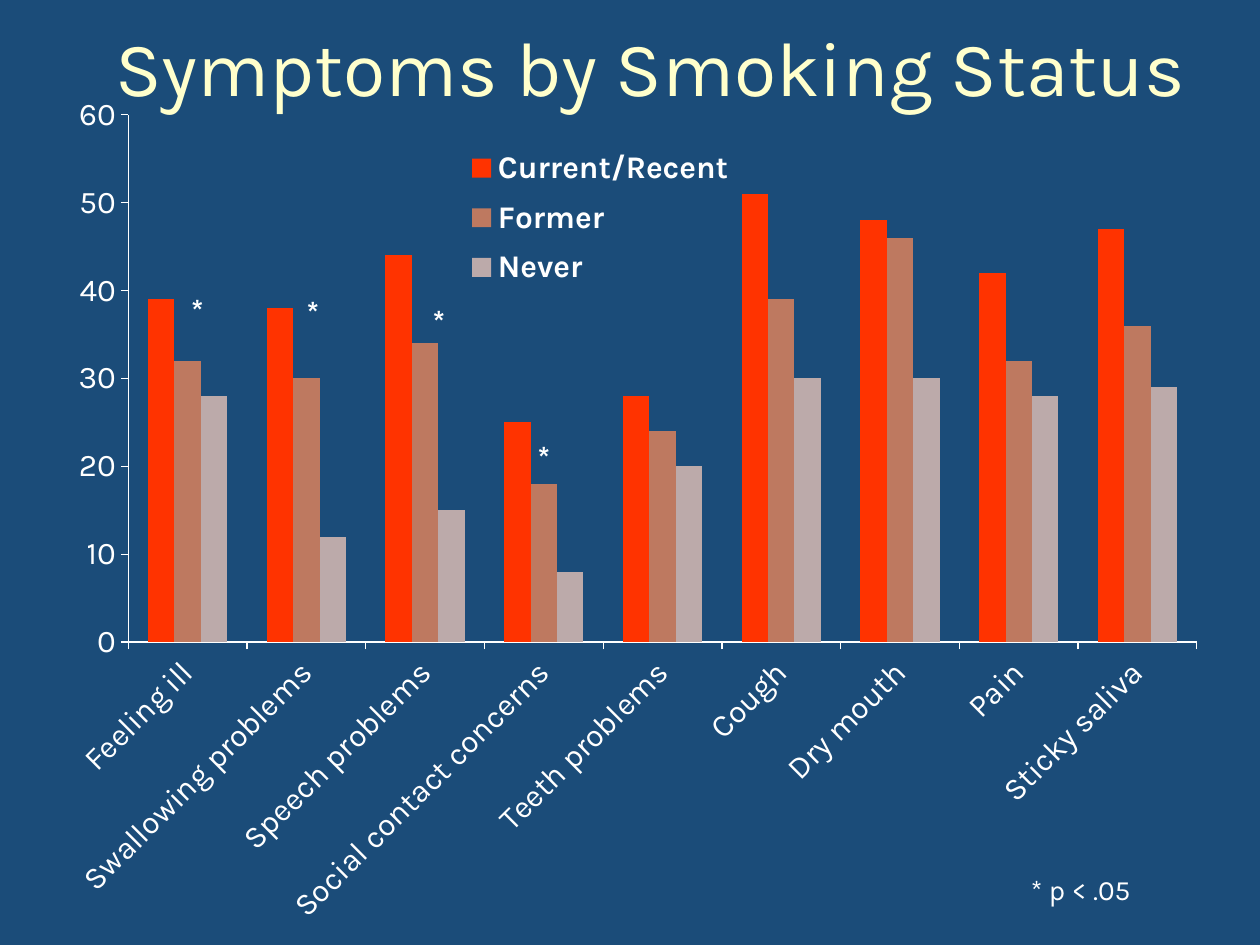
"""Build a slide charting symptoms by smoking status."""
from typing import NamedTuple

from pptx import Presentation
from pptx import util as u
from pptx.chart import data as chart_data
from pptx.dml.color import RGBColor
from pptx.enum import chart as chart_enum, text
from pptx.oxml import parse_xml
from pptx.oxml.ns import nsdecls, qn

NAVY = RGBColor(0x1B, 0x4C, 0x79)
CREAM = RGBColor(0xFF, 0xFF, 0xCC)
WHITE = RGBColor(0xFF, 0xFF, 0xFF)
RED = RGBColor(0xFF, 0x33, 0x00)
BROWN = RGBColor(0xBE, 0x79, 0x60)
GREY = RGBColor(0xBC, 0xAA, 0xAA)
FONT = "Karla"


class Group(NamedTuple):
    name: str
    values: tuple
    color: RGBColor


class Note(NamedTuple):
    words: str
    left: float
    top: float
    width: float
    height: float
    size: int
    bold: bool


SYMPTOMS = (
    "Feeling ill", "Swallowing problems", "Speech problems",
    "Social contact concerns", "Teeth problems", "Cough",
    "Dry mouth", "Pain", "Sticky saliva",
)
GROUPS = (
    Group("Current/Recent", (39, 38, 44, 25, 28, 51, 48, 42, 47), RED),
    Group("Former", (32, 30, 34, 18, 24, 39, 46, 32, 36), BROWN),
    Group("Never", (28, 12, 15, 8, 20, 30, 30, 28, 29), GREY),
)
STAR_POSITIONS = ((102, 163), (168, 164), (240, 169), (300, 247))
NOTES = [Note("*", left, top, 18, 29, 18, True) for left, top in STAR_POSITIONS]
NOTES.append(Note("* p < .05", 582, 495, 102, 27, 16, False))


def style_font(font, size: int, color: RGBColor, bold: bool = False) -> None:
    """Apply the slide typeface with a size, colour and weight."""
    font.name = FONT
    font.size = u.Pt(size)
    font.bold = bold
    font.color.rgb = color


def make_layout(x: float, y: float, width: float, height: float, inner: bool = False):
    """Return a manual chart layout given in fractions of the chart."""
    target = '<c:layoutTarget val="inner"/>' if inner else ""
    return parse_xml(
        f'<c:layout {nsdecls("c")}><c:manualLayout>{target}'
        '<c:xMode val="edge"/><c:yMode val="edge"/>'
        f'<c:x val="{x}"/><c:y val="{y}"/><c:w val="{width}"/><c:h val="{height}"/>'
        "</c:manualLayout></c:layout>"
    )


def add_title(slide, words: str) -> None:
    """Place and format the title placeholder."""
    title = slide.shapes.title
    title.left, title.top = u.Pt(48), u.Pt(3.6)
    title.width, title.height = u.Pt(648), u.Pt(68.4)
    title.text_frame.text = words
    title.text_frame.vertical_anchor = text.MSO_ANCHOR.MIDDLE
    paragraph = title.text_frame.paragraphs[0]
    paragraph.alignment = text.PP_ALIGN.CENTER
    style_font(paragraph.font, 44, CREAM)


def format_axis(axis) -> None:
    """Give an axis a white line with outer ticks and no gridlines."""
    axis.has_major_gridlines = False
    axis.major_tick_mark = chart_enum.XL_TICK_MARK.OUTSIDE
    axis.minor_tick_mark = chart_enum.XL_TICK_MARK.NONE
    axis.format.line.color.rgb = WHITE
    axis.format.line.width = u.Pt(0.75)
    style_font(axis.tick_labels.font, 18, WHITE)


def add_symptom_chart(slide) -> None:
    """Add the clustered columns with their axes and legend."""
    data = chart_data.CategoryChartData()
    data.categories = SYMPTOMS
    for group in GROUPS:
        data.add_series(group.name, group.values)
    chart = slide.shapes.add_chart(
        chart_enum.XL_CHART_TYPE.COLUMN_CLUSTERED,
        u.Pt(30), u.Pt(54), u.Pt(666), u.Pt(486), data,
    ).chart
    chart.has_title = False
    style_font(chart.font, 18, WHITE)

    plot = chart.plots[0]
    plot.gap_width = 150
    plot.overlap = 0
    plot.vary_by_categories = False
    for series, group in zip(plot.series, GROUPS):
        series.format.fill.solid()
        series.format.fill.fore_color.rgb = group.color

    format_axis(chart.category_axis)
    format_axis(chart.value_axis)
    label_body = chart.category_axis.tick_labels.font._element.getparent().getparent().getparent()
    label_body.find(qn("a:bodyPr")).set("rot", "-2700000")
    chart.value_axis.minimum_scale = 0
    chart.value_axis.maximum_scale = 60
    chart.value_axis.major_unit = 10

    plot_area = chart._chartSpace.chart.plotArea
    for layout in plot_area.findall(qn("c:layout")):
        plot_area.remove(layout)
    plot_area.insert(0, make_layout(0.065, 0.024, 0.917, 0.62, inner=True))

    chart.has_legend = True
    legend = chart.legend
    legend.position = chart_enum.XL_LEGEND_POSITION.RIGHT
    legend.include_in_layout = False
    style_font(legend.font, 18, WHITE, bold=True)
    for layout in legend._element.findall(qn("c:layout")):
        legend._element.remove(layout)
    legend._element.find(qn("c:legendPos")).addnext(make_layout(0.35, 0.05, 0.24, 0.19))


def add_note(slide, note: Note) -> None:
    """Add one line of white text."""
    box = slide.shapes.add_textbox(
        u.Pt(note.left), u.Pt(note.top), u.Pt(note.width), u.Pt(note.height)
    )
    frame = box.text_frame
    frame.word_wrap = True
    frame.auto_size = text.MSO_AUTO_SIZE.SHAPE_TO_FIT_TEXT
    frame.text = note.words
    style_font(frame.paragraphs[0].font, note.size, WHITE, note.bold)


def main() -> None:
    """Build and save the presentation."""
    presentation = Presentation()
    presentation.slide_width, presentation.slide_height = u.Pt(720), u.Pt(540)
    slide = presentation.slides.add_slide(presentation.slide_layouts[5])
    slide.background.fill.solid()
    slide.background.fill.fore_color.rgb = NAVY
    add_title(slide, "Symptoms by Smoking Status")
    add_symptom_chart(slide)
    for note in NOTES:
        add_note(slide, note)
    presentation.save("out.pptx")


if __name__ == "__main__":
    main()
